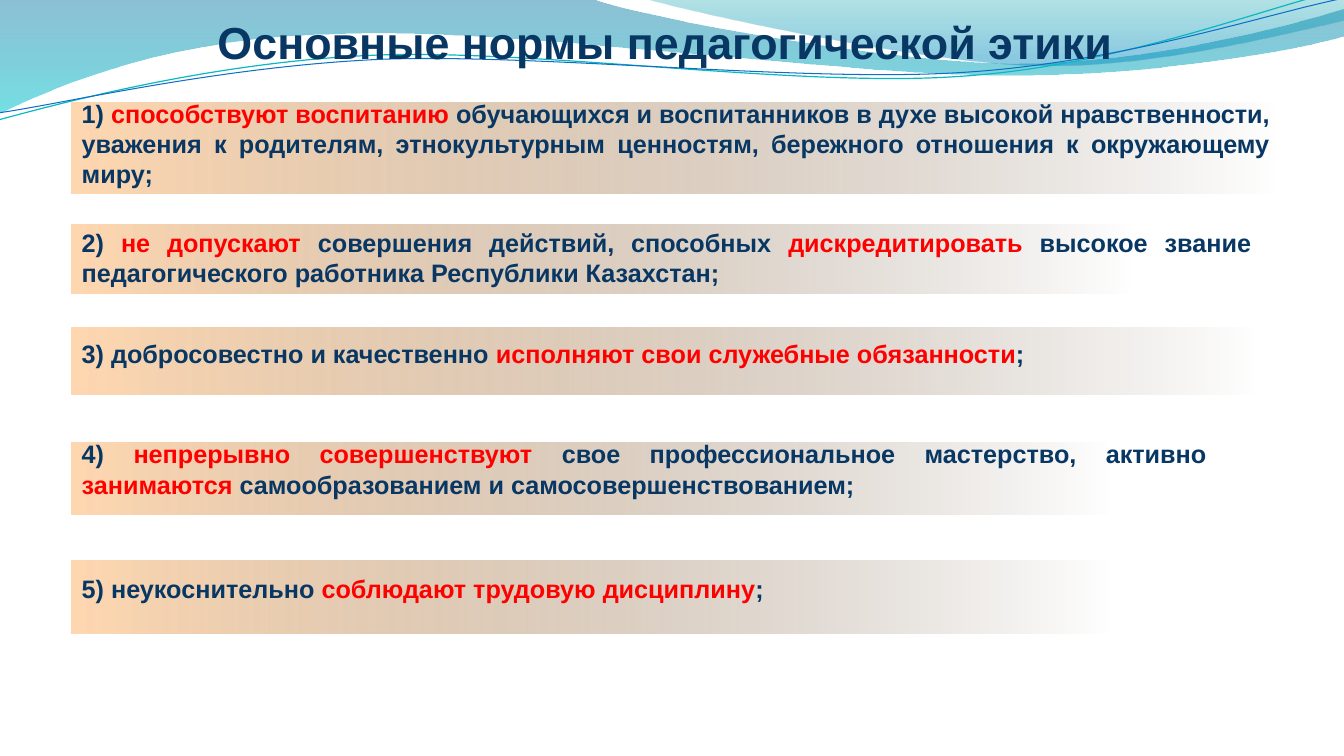
from lxml import etree
from pptx import Presentation, util as u
from pptx.dml.color import RGBColor
from pptx.enum import shapes, text
from pptx.oxml.ns import qn

NAVY, RED = "083763", "FF0000"
BAR_STOPS = [(0, "FFD8B1", 100), (1, "766452", 0)]
LEFT = 1.81
LINE_TILT = 357.3

# Waves in cm: a start, then steps (2 numbers: line, 6 numbers: Bezier curve)
BACK_WAVE = [
    (0, 0), (14.91, -0.03), (16.1, 0.43, 22.48, 1.6, 25.68, 1.6),
    (28.9, 1.6, 32.46, 0.66, 33.86, 0.23), (33.91, 0.91),
    (33.3, 1.12, 29.46, 1.93, 25.25, 1.9), (21.06, 1.9, 12.93, 0.71, 8.71, 0.86),
    (4.37, 0.91, 1.55, 2.11, -0.03, 2.87)]
FRONT_WAVE = [
    (16.23, -0.03), (17.25, 0.28, 23.09, 1.57, 26.04, 1.65),
    (28.98, 1.75, 32.56, 0.81, 33.86, 0.53), (33.86, 0)]
TEAL_LINE = [
    (-0.08, 2.22), (1.6, 1.85, 5.36, 1.03, 9.37, 1.04),
    (13.41, 1.05, 20.02, 2.36, 24.1, 2.27), (28.17, 2.21, 31.85, 0.91, 33.86, 0.55)]
BLUE_LINE = [
    (-0.05, 2.04), (1.56, 1.89, 5.54, 1.14, 9.61, 1.15),
    (13.65, 1.19, 20.19, 2.24, 24.23, 2.17), (28.31, 2.11, 31.91, 1.06, 33.94, 0.75)]

# Bar (top, width, height), text (top, width, height), wording with *emphasis*
NORMS = [
    ((2.58, 30.45, 2.29), (2.35, 30.45, 2.57),
     "1) *способствуют воспитанию *обучающихся и воспитанников в духе высокой "
     "нравственности, уважения к родителям, этнокультурным ценностям, бережного "
     "отношения к окружающему миру;"),
    ((5.66, 26.8, 1.73), (5.61, 29.97, 1.8),
     "2) *не допускают *совершения действий, способных *дискредитировать* высокое "
     "звание педагогического работника Республики Казахстан;"),
    ((8.26, 29.97, 1.69), (8.41, 28.73, 1.02),
     "3) добросовестно и качественно *исполняют свои служебные обязанности*;"),
    ((11.15, 26.26, 1.82), (10.93, 28.85, 1.8),
     "4) *непрерывно совершенствуют *свое профессиональное мастерство, активно "
     "*занимаются* самообразованием и самосовершенствованием;"),
    ((14.13, 26.26, 1.83), (14.33, 28.85, 1.02),
     "5) неукоснительно *соблюдают трудовую дисциплину*;"),
]


def color(hex_code):
    return RGBColor.from_string(hex_code)


class NormsSlide:
    font = "Arial"

    def __init__(self, deck):
        self.slide = deck.slides.add_slide(deck.slide_layouts[5])
        self.shapes = self.slide.shapes

    def gradient(self, shape, stops, angle):
        fill = shape.fill
        fill.gradient()
        fill.gradient_angle = angle
        for stop, (position, hex_code, _) in zip(fill.gradient_stops, stops):
            stop.position = position
            stop.color.rgb = color(hex_code)
        tints = shape._element.spPr.iter(qn("a:srgbClr"))
        for tint, (_, _, opacity) in zip(tints, stops):
            if opacity < 100:
                etree.SubElement(tint, qn("a:alpha"), val=str(opacity * 1000))

    def outline(self, steps, closed):
        start, *rest = steps
        points = [(u.Cm(x), u.Cm(y)) for step in rest
                  for x, y in zip(step[::2], step[1::2])]
        builder = self.shapes.build_freeform(u.Cm(start[0]), u.Cm(start[1]))
        builder.add_line_segments(points, close=closed)
        shape = builder.convert_to_shape()
        shape.shadow.inherit = False
        # Join each three segments of a curve step into one Bezier curve
        segments = iter(list(shape._element.iter(qn("a:lnTo"))))
        for step in rest:
            first = next(segments)
            if len(step) == 6:
                first.tag = qn("a:cubicBezTo")
                for _ in range(2):
                    extra = next(segments)
                    first.append(extra[0])
                    extra.getparent().remove(extra)
        return shape

    def wave(self, steps, stops):
        shape = self.outline(steps, True)
        shape.line.fill.background()
        self.gradient(shape, stops, 270)

    def curve(self, steps, hex_code, width):
        shape = self.outline(steps, False)
        shape.rotation = LINE_TILT
        shape.fill.background()
        shape.line.color.rgb = color(hex_code)
        shape.line.width = u.Pt(width)

    def bar(self, top, width, height):
        shape = self.shapes.add_shape(shapes.MSO_SHAPE.RECTANGLE, u.Cm(LEFT),
                                      u.Cm(top), u.Cm(width), u.Cm(height))
        shape.shadow.inherit = False
        shape.line.fill.background()
        self.gradient(shape, BAR_STOPS, 0)

    def style(self, run, size, hex_code):
        run.font.name, run.font.size, run.font.bold = self.font, u.Pt(size), True
        run.font.color.rgb = color(hex_code)

    def norm(self, top, width, height, wording):
        frame = self.shapes.add_textbox(u.Cm(LEFT), u.Cm(top), u.Cm(width),
                                        u.Cm(height)).text_frame
        frame.word_wrap = True
        frame.auto_size = text.MSO_AUTO_SIZE.SHAPE_TO_FIT_TEXT
        paragraph = frame.paragraphs[0]
        paragraph.alignment = text.PP_ALIGN.JUSTIFY
        for i, piece in enumerate(wording.split("*")):
            run = paragraph.add_run()
            run.text = piece
            self.style(run, 18, RED if i % 2 else NAVY)

    def title(self, wording):
        title = self.shapes.title
        title.left, title.top = u.Cm(1.27), u.Cm(0.23)
        title.width, title.height = u.Cm(30.99), u.Cm(1.63)
        frame = title.text_frame
        frame.text = wording
        frame.word_wrap = True
        frame.auto_size = text.MSO_AUTO_SIZE.NONE
        frame.vertical_anchor = text.MSO_ANCHOR.MIDDLE
        frame.paragraphs[0].alignment = text.PP_ALIGN.CENTER
        self.style(frame.paragraphs[0].runs[0], 32, NAVY)
        # Bring the title in front of the waves
        self.shapes._spTree.append(title._element)


def main():
    deck = Presentation()
    deck.slide_width, deck.slide_height = u.Cm(33.87), u.Cm(19.05)
    page = NormsSlide(deck)

    # Header waves
    page.wave(BACK_WAVE, [(0, "0074A1", 45), (1, "00C6CF", 55)])
    page.wave(FRONT_WAVE, [(0, "00A1A9", 30), (0.8, "008BBF", 45)])
    page.curve(TEAL_LINE, "0AB8BF", 0.85)
    page.curve(BLUE_LINE, "0F6FC6", 0.75)

    # Title and norms
    page.title("Основные нормы педагогической этики")
    for bar, place, wording in NORMS:
        page.bar(*bar)
        page.norm(*place, wording)

    deck.save("out.pptx")


if __name__ == "__main__":
    main()
